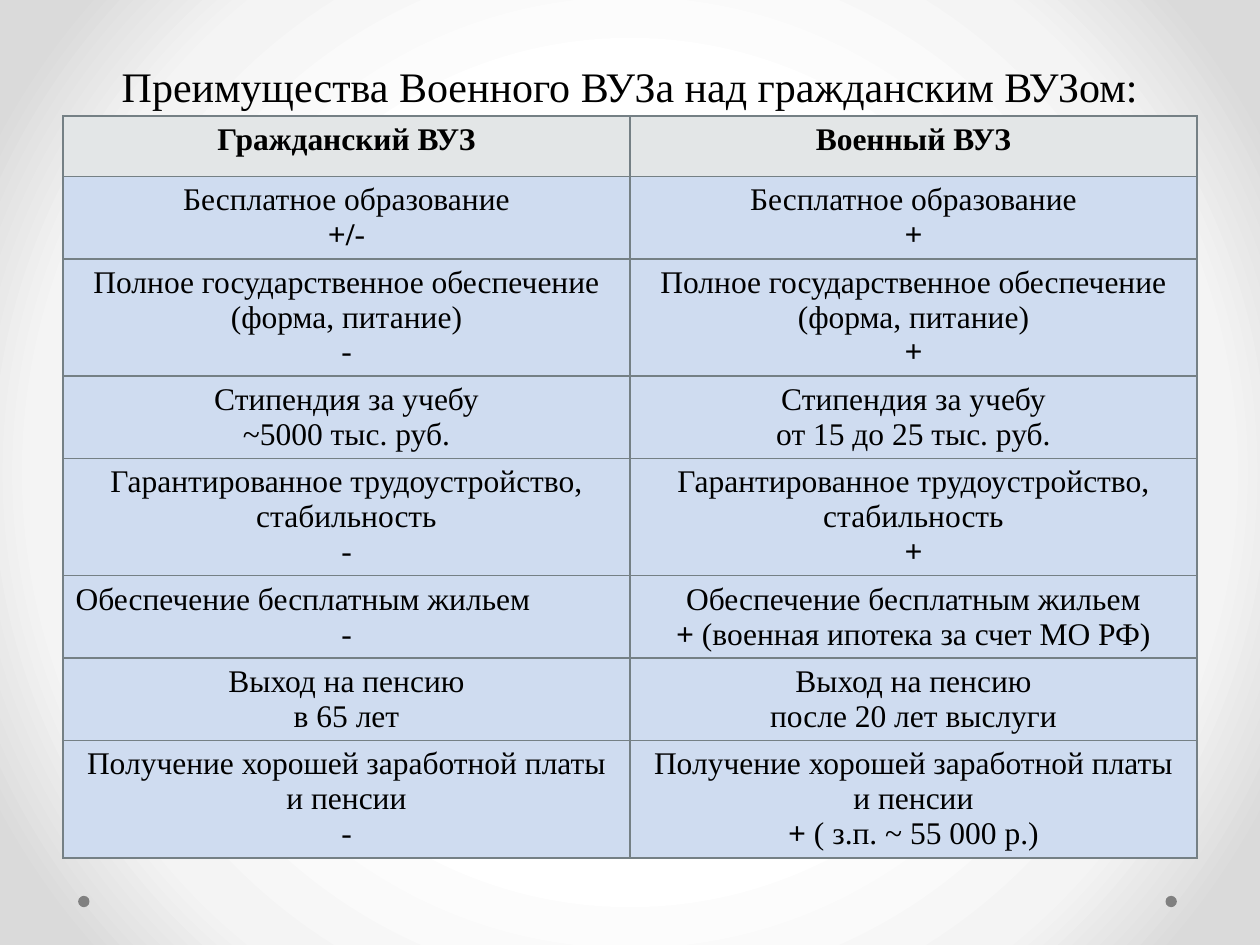
from dataclasses import dataclass

from pptx import Presentation
from pptx import util as u
from pptx.dml.color import RGBColor
from pptx.enum import shapes, text
from pptx.oxml import parse_xml
from pptx.oxml.ns import nsdecls, qn


@dataclass(frozen=True)
class Theme:
    font: str = "Times New Roman"
    ink: str = "000000"
    header: str = "E3E6E7"
    body: str = "CFDCF0"
    border: str = "758085"
    dot: str = "808080"
    backdrop: tuple = ((50, "FFFFFF"), (76, "F4F4F4"), (92, "DADADA"))
    title_size: int = 24
    title_leading: int = 58
    cell_size: int = 18
    border_width: int = 1


@dataclass(frozen=True)
class Span:
    words: str
    bold: bool = False


@dataclass(frozen=True)
class Comparison:
    """One topic, with the verdict for each kind of university."""
    topic: str
    civil: tuple[Span, ...]
    military: tuple[Span, ...]
    height: float
    civil_centred: bool = True
    line_break: bool = False


THEME = Theme()
TWO_LINES, THREE_LINES = 0.65, 0.93
HEADER_HEIGHT = 0.48
TITLE = "Преимущества Военного ВУЗа над гражданским ВУЗом:"
HEADINGS = ("Гражданский ВУЗ", "Военный ВУЗ")
MINUS, PLUS = Span("-"), Span("+", True)
COMPARISONS = (
    Comparison("Бесплатное образование", (Span("+/", True), MINUS), (PLUS,), TWO_LINES),
    Comparison("Полное государственное обеспечение (форма, питание)",
               (MINUS,), (PLUS,), THREE_LINES),
    Comparison("Стипендия за учебу", (Span("~5000 тыс. руб."),),
               (Span("от 15 до 25 тыс. руб."),), TWO_LINES),
    Comparison("Гарантированное трудоустройство, стабильность",
               (MINUS,), (PLUS,), THREE_LINES, line_break=True),
    Comparison("Обеспечение бесплатным жильем", (MINUS,),
               (PLUS, Span(" (военная ипотека за счет МО РФ)")), TWO_LINES,
               civil_centred=False),
    Comparison("Выход на пенсию", (Span("в 65 лет"),),
               (Span("после 20 лет выслуги"),), TWO_LINES),
    Comparison("Получение хорошей заработной платы и пенсии", (MINUS,),
               (PLUS, Span(" ( з.п. ~ 55 000 р.)")), THREE_LINES),
)


def paint_background(page) -> None:
    """Fill the page with a gradient spreading from its centre."""
    stops = "".join(
        f'<a:gs pos="{place * 1000}"><a:srgbClr val="{color}"/></a:gs>'
        for place, color in THEME.backdrop)
    background = parse_xml(
        f'<p:bg {nsdecls("p", "a")}><p:bgPr><a:gradFill rotWithShape="1">'
        f'<a:gsLst>{stops}</a:gsLst><a:path path="circle">'
        '<a:fillToRect l="50000" t="50000" r="50000" b="50000"/></a:path>'
        '</a:gradFill><a:effectLst/></p:bgPr></p:bg>')
    page.element.find(qn("p:cSld")).insert(0, background)


def add_dot(page, left: float) -> None:
    dot = page.shapes.add_shape(shapes.MSO_SHAPE.OVAL, u.Inches(left), u.Inches(7.11),
                                u.Inches(0.09), u.Inches(0.09))
    dot.shadow.inherit = False
    dot.fill.solid()
    dot.fill.fore_color.rgb = RGBColor.from_string(THEME.dot)
    dot.line.fill.background()


def write(para, spans: tuple[Span, ...], size: int, centred: bool = True) -> None:
    para.alignment = text.PP_ALIGN.CENTER if centred else text.PP_ALIGN.LEFT
    for span in spans:
        run = para.add_run()
        run.text = span.words
        run.font.name = THEME.font
        run.font.size = u.Pt(size)
        run.font.bold = span.bold
        run.font.color.rgb = RGBColor.from_string(THEME.ink)


def add_title(page) -> None:
    title = page.shapes.title
    title.left, title.top = u.Inches(0.5), u.Inches(-0.82)
    title.width, title.height = u.Inches(9), u.Inches(1.75)
    title.text_frame.word_wrap = True
    title.text_frame.vertical_anchor = text.MSO_ANCHOR.BOTTOM
    para = title.text_frame.paragraphs[0]
    para.line_spacing = u.Pt(THEME.title_leading)
    write(para, (Span(TITLE),), THEME.title_size)


def style_cell(cell, fill: str) -> None:
    properties = cell._tc.get_or_add_tcPr()
    for side in ("lnL", "lnR", "lnT", "lnB"):
        properties.append(parse_xml(
            f'<a:{side} {nsdecls("a")} w="{u.Pt(THEME.border_width)}"><a:solidFill>'
            f'<a:srgbClr val="{THEME.border}"/></a:solidFill></a:{side}>'))
    cell.fill.solid()
    cell.fill.fore_color.rgb = RGBColor.from_string(fill)


def fill_comparison(cell, item: Comparison, verdict: tuple[Span, ...],
                    centred: bool) -> None:
    style_cell(cell, THEME.body)
    para = cell.text_frame.paragraphs[0]
    write(para, (Span(item.topic),), THEME.cell_size, centred)
    if item.line_break:
        para.add_line_break()
    else:
        para = cell.text_frame.add_paragraph()
    write(para, verdict, THEME.cell_size)


def add_comparison_table(page) -> None:
    heights = [HEADER_HEIGHT] + [item.height for item in COMPARISONS]
    table = page.shapes.add_table(len(heights), len(HEADINGS), u.Inches(0.5),
                                  u.Inches(0.92), u.Inches(9),
                                  u.Inches(sum(heights))).table
    table.first_row = table.horz_banding = False
    for row, height in zip(table.rows, heights):
        row.height = u.Inches(height)
    for column, heading in enumerate(HEADINGS):
        cell = table.cell(0, column)
        style_cell(cell, THEME.header)
        write(cell.text_frame.paragraphs[0], (Span(heading, True),), THEME.cell_size)
    for row, item in enumerate(COMPARISONS, start=1):
        fill_comparison(table.cell(row, 0), item, item.civil, item.civil_centred)
        fill_comparison(table.cell(row, 1), item, item.military, True)


def main() -> None:
    deck = Presentation()
    deck.slide_width, deck.slide_height = u.Inches(10), u.Inches(7.5)
    page = deck.slides.add_slide(deck.slide_layouts[5])
    paint_background(page)
    for left in (9.25, 0.62):
        add_dot(page, left)
    add_title(page)
    add_comparison_table(page)
    deck.save("out.pptx")


if __name__ == "__main__":
    main()
